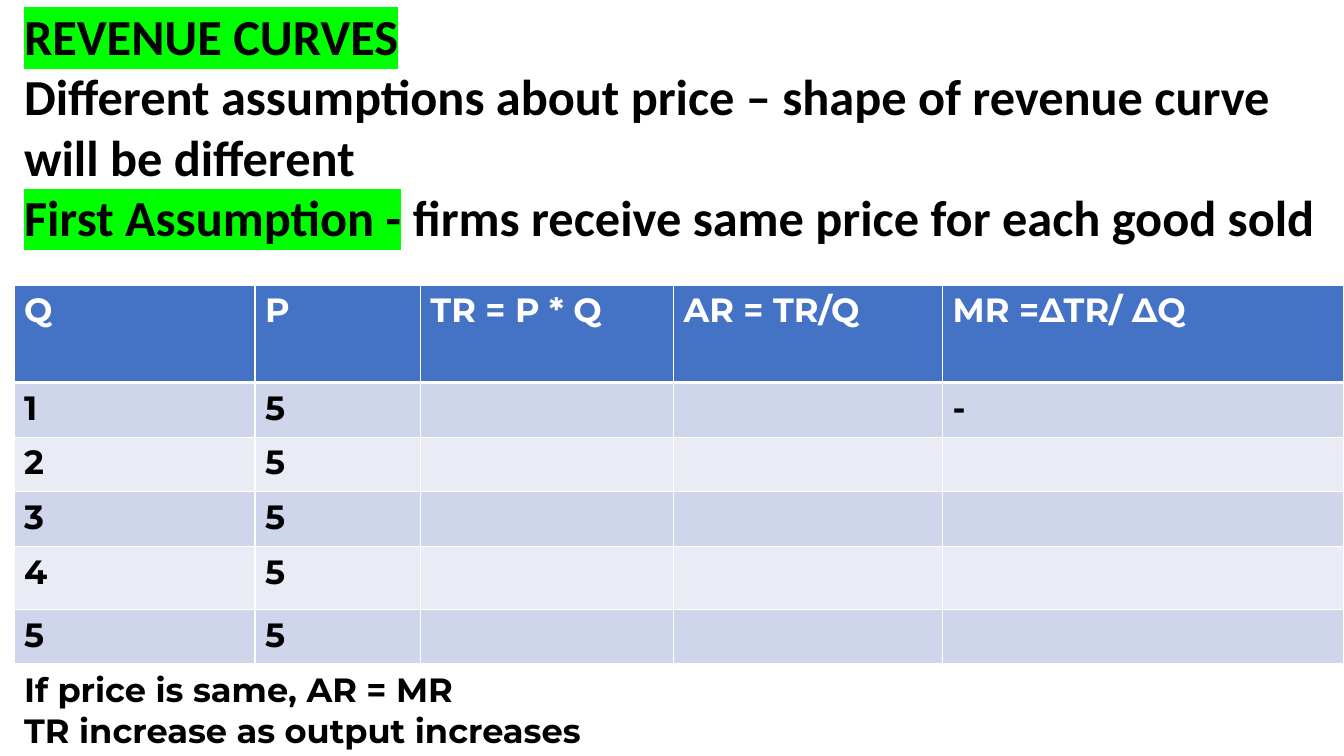
from lxml.etree import SubElement
from pptx import Presentation
from pptx.dml.color import RGBColor
from pptx.oxml.ns import qn
from pptx.util import Inches, Pt

WIDTH, HEIGHT = 13.33, 7.5
LEFT = 0.14
FULL = WIDTH - LEFT
TITLE_BOX = (LEFT, 0, FULL, 2.52)
TABLE_BOX = (LEFT, 2.83, FULL, 3.76)
NOTES_BOX = (LEFT, 6.59, 8.49, 0.91)

BLACK, WHITE, GREEN = "000000", "FFFFFF", "00FF00"
HEADER_FILL = "4472C4"
BAND_FILLS = ("E9EBF5", "CFD5EA")

COLUMN_SHARES = (2.39, 1.64, 2.51, 2.67, 3.98)
ROW_SHARES = (0.96, 0.54, 0.54, 0.54, 0.62, 0.54)
HEADINGS = ("Q", "P", "TR = P * Q", "AR = TR/Q", "MR =∆TR/ ∆Q")
PRICE = 5
QUANTITIES = range(1, 6)

TITLE_LINES = (
    (("REVENUE CURVES", GREEN),),
    (("Different assumptions about price – shape of revenue curve will be different", None),),
    (("First Assumption -", GREEN), (" firms receive same price for each good sold", None)),
)
NOTES_LINES = (
    (("If price is same, AR = MR", None),),
    (("TR increase as output increases", None),),
)


def colour(value):
    return RGBColor.from_string(value)


def add_span(para, text, font="Montserrat", size=24, color=BLACK, highlight=None):
    span = para.add_run()
    span.text = text
    span.font.size = Pt(size)
    span.font.bold = True
    span.font.color.rgb = colour(color)
    if highlight:
        mark = SubElement(span.font._element, qn("a:highlight"))
        SubElement(mark, qn("a:srgbClr"), val=highlight)
    span.font.name = font


def add_text(page, area, lines, **style):
    box = page.shapes.add_textbox(*map(Inches, area))
    frame = box.text_frame
    frame.word_wrap = True
    for index, line in enumerate(lines):
        para = frame.add_paragraph() if index else frame.paragraphs[0]
        for text, highlight in line:
            add_span(para, text, highlight=highlight, **style)


def set_borders(cell, top, bottom):
    properties = cell._tc.get_or_add_tcPr()
    for side, points in (("L", 1), ("R", 1), ("T", top), ("B", bottom)):
        line = SubElement(properties, qn(f"a:ln{side}"), w=str(Pt(points)))
        fill = SubElement(line, qn("a:solidFill"))
        SubElement(fill, qn("a:srgbClr"), val=WHITE)


def add_revenue_table(page, area):
    left, top, width, height = area
    rows = [HEADINGS]
    for quantity in QUANTITIES:
        rows.append((str(quantity), str(PRICE), "", "", "-" if quantity == 1 else ""))
    table = page.shapes.add_table(len(rows), len(HEADINGS), *map(Inches, area)).table
    for column, share in zip(table.columns, COLUMN_SHARES):
        column.width = Inches(width * share / sum(COLUMN_SHARES))
    for row, share in zip(table.rows, ROW_SHARES):
        row.height = Inches(height * share / sum(ROW_SHARES))
    for row_index, texts in enumerate(rows):
        header = row_index == 0
        for column_index, text in enumerate(texts):
            cell = table.cell(row_index, column_index)
            set_borders(cell, top=3 if row_index == 1 else 1, bottom=3 if header else 1)
            cell.fill.solid()
            cell.fill.fore_color.rgb = colour(HEADER_FILL if header else BAND_FILLS[row_index % 2])
            if text:
                add_span(cell.text_frame.paragraphs[0], text, color=WHITE if header else BLACK)


def main():
    deck = Presentation()
    deck.slide_width, deck.slide_height = Inches(WIDTH), Inches(HEIGHT)
    page = deck.slides.add_slide(deck.slide_layouts[6])
    add_revenue_table(page, TABLE_BOX)
    add_text(page, TITLE_BOX, TITLE_LINES, font="Calibri", size=36)
    add_text(page, NOTES_BOX, NOTES_LINES)
    deck.save("out.pptx")


if __name__ == "__main__":
    main()
